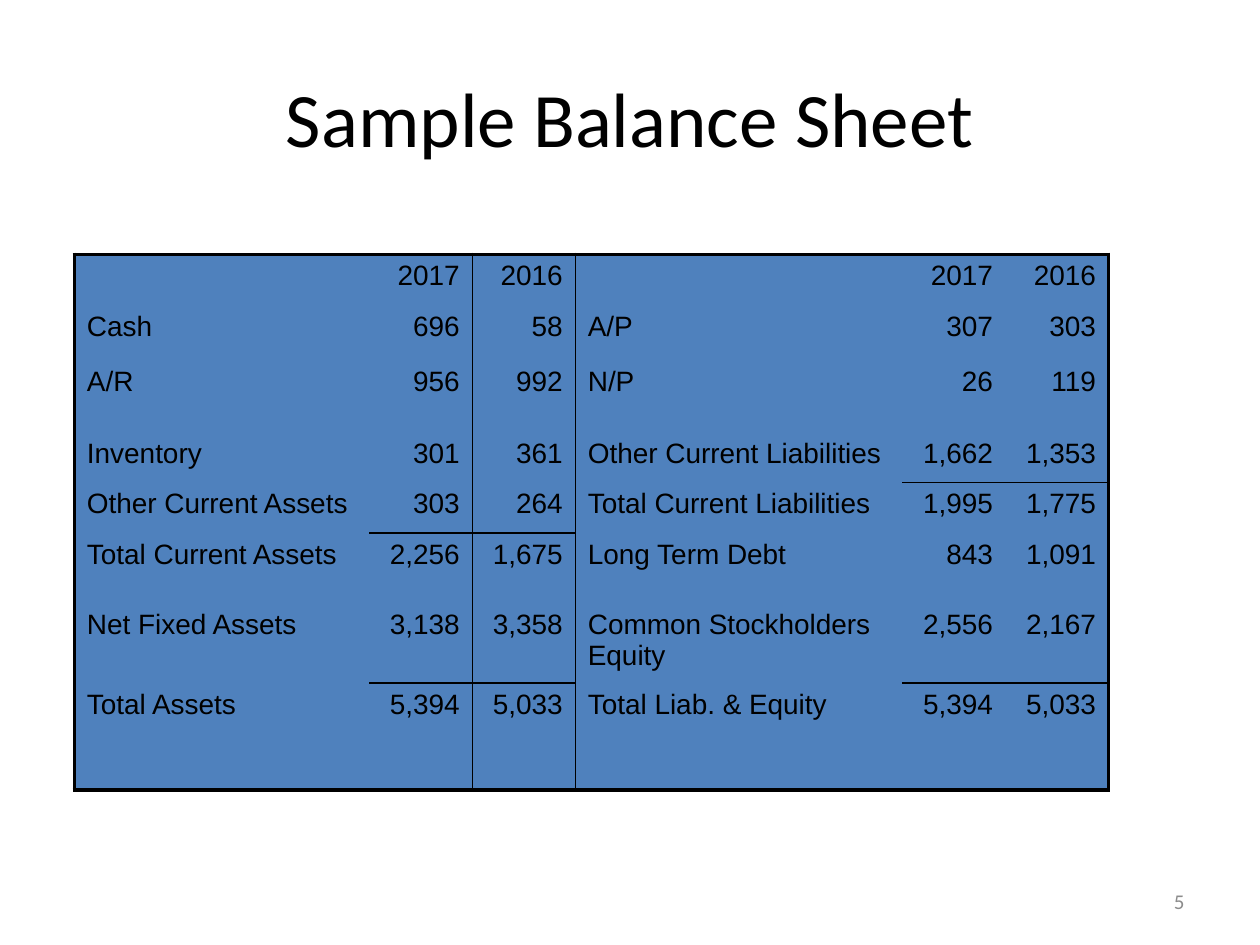
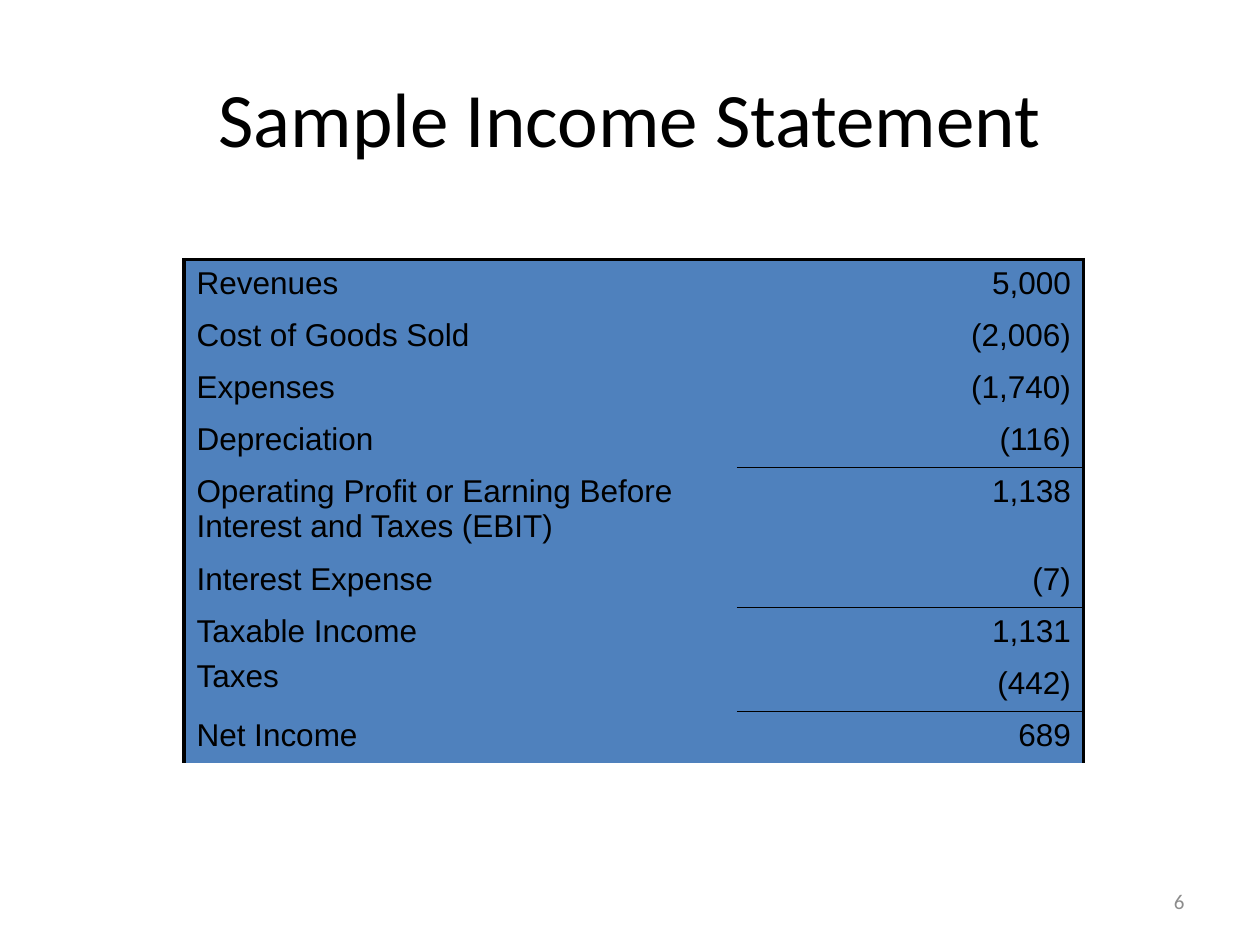
from dataclasses import dataclass

from lxml import etree
from pptx import Presentation
from pptx import util as u
from pptx.dml import color
from pptx.enum import text
from pptx.oxml import ns

LEFT, CENTER, RIGHT = text.PP_ALIGN.LEFT, text.PP_ALIGN.CENTER, text.PP_ALIGN.RIGHT


@dataclass(frozen=True)
class Theme:
    ink: str = "000000"
    muted: str = "8C8C8C"
    panel: str = "4F81BD"
    heading_font: str = "Calibri"
    figure_font: str = "Arial"
    title_size: float = 44
    number_size: float = 12
    balance_size: float = 16
    income_size: float = 18
    frame_line: float = 2.25
    rule_line: float = 1


THEME = Theme()
TITLE_BOX = (36, 21.6, 648, 90)
NUMBER_BOX = (516.24, 500.4, 167.76, 28.8)

BALANCE = [
    ("", "2017", "2016", "", "2017", "2016"),
    ("Cash", "696", "58", "A/P", "307", "303"),
    ("A/R", "956", "992", "N/P", "26", "119"),
    ("Inventory", "301", "361", "Other Current Liabilities", "1,662", "1,353"),
    ("Other Current Assets", "303", "264", "Total Current Liabilities", "1,995", "1,775"),
    ("Total Current Assets", "2,256", "1,675", "Long Term Debt", "843", "1,091"),
    ("Net Fixed Assets", "3,138", "3,358", "Common Stockholders Equity", "2,556", "2,167"),
    ("Total Assets", "5,394", "5,033", "Total Liab. & Equity", "5,394", "5,033"),
]
INCOME = [
    ("Revenues", "5,000"),
    ("Cost of Goods Sold", "(2,006)"),
    ("Expenses", "(1,740)"),
    ("Depreciation", "(116)"),
    ("Operating Profit or Earning Before Interest and Taxes (EBIT)", "1,138"),
    ("Interest Expense", "(7)"),
    ("Taxable Income", "1,131"),
    ("Taxes", "(442)"),
    ("Net Income", "689"),
]


def points(box):
    return [u.Pt(length) for length in box]


def write(frame, words, *, size, font=THEME.figure_font, ink=THEME.ink, align=LEFT):
    paragraph = frame.paragraphs[0]
    paragraph.alignment = align
    run = paragraph.add_run()
    run.text = words
    run.font.size = u.Pt(size)
    run.font.name = font
    run.font.color.rgb = color.RGBColor.from_string(ink)


def add_titled_slide(deck, title, number):
    slide = deck.slides.add_slide(deck.slide_layouts[5])
    heading = slide.shapes.title
    heading.left, heading.top, heading.width, heading.height = points(TITLE_BOX)
    heading.text_frame.vertical_anchor = text.MSO_ANCHOR.MIDDLE
    write(heading.text_frame, title, size=THEME.title_size,
          font=THEME.heading_font, align=CENTER)
    footer = slide.shapes.add_textbox(*points(NUMBER_BOX)).text_frame
    footer.word_wrap = True
    footer.vertical_anchor = text.MSO_ANCHOR.MIDDLE
    write(footer, number, size=THEME.number_size, font=THEME.heading_font,
          ink=THEME.muted, align=RIGHT)
    return slide


def draw_borders(cell, widths):
    properties = cell._tc.get_or_add_tcPr()
    for side, width in zip("LRTB", widths):
        line = etree.SubElement(properties, ns.qn(f"a:ln{side}"), w=str(u.Pt(width)))
        if width:
            fill = etree.SubElement(line, ns.qn("a:solidFill"))
            etree.SubElement(fill, ns.qn("a:srgbClr"), val=THEME.ink)
        else:
            etree.SubElement(line, ns.qn("a:noFill"))


def add_statement(slide, origin, entries, widths, heights, *, size, label_columns,
                  totals, dividers=(), closed=True):
    box = points((*origin, sum(widths), sum(heights)))
    statement = slide.shapes.add_table(len(entries), len(widths), *box).table
    statement.first_row = statement.horz_banding = False
    for column, width in zip(statement.columns, widths):
        column.width = u.Pt(width)
    for row, height in zip(statement.rows, heights):
        row.height = u.Pt(height)

    def vertical(edge):
        if edge in (0, len(widths)):
            return THEME.frame_line
        return THEME.rule_line if edge in dividers else 0

    def horizontal(edge, column):
        if edge == 0 or (closed and edge == len(entries)):
            return THEME.frame_line
        return THEME.rule_line if edge in totals.get(column, ()) else 0

    for r, entry in enumerate(entries):
        for c, words in enumerate(entry):
            cell = statement.cell(r, c)
            draw_borders(cell, (vertical(c), vertical(c + 1),
                                horizontal(r, c), horizontal(r + 1, c)))
            cell.fill.solid()
            cell.fill.fore_color.rgb = color.RGBColor.from_string(THEME.panel)
            if words:
                write(cell.text_frame, words, size=size,
                      align=LEFT if c in label_columns else RIGHT)
    return statement


def balance_sheet(deck):
    slide = add_titled_slide(deck, "Sample Balance Sheet", "5")
    year = 58.9
    add_statement(
        slide, (42.5, 145.4), BALANCE,
        widths=(168.5, year, year, 187, year, year),
        heights=(28.8, 31.7, 41, 28.8, 28.8, 40.3, 41.8, 61),
        size=THEME.balance_size, label_columns=(0, 3), dividers=(2, 3),
        totals={1: (5, 7), 2: (5, 7), 4: (4, 7), 5: (4, 7)})


def income_statement(deck):
    slide = add_titled_slide(deck, "Sample Income Statement", "6")
    statement = add_statement(
        slide, (105.1, 148.3), INCOME,
        widths=(316, 198), heights=[29.7] * len(INCOME),
        size=THEME.income_size, label_columns=(0,),
        totals={1: (4, 6, 8)}, closed=False)
    taxes = statement.cell(7, 0)
    taxes.margin_top = taxes.margin_bottom = 0


def main():
    deck = Presentation()
    deck.slide_width, deck.slide_height = u.Pt(720), u.Pt(540)
    balance_sheet(deck)
    income_statement(deck)
    deck.save("out.pptx")


if __name__ == "__main__":
    main()
